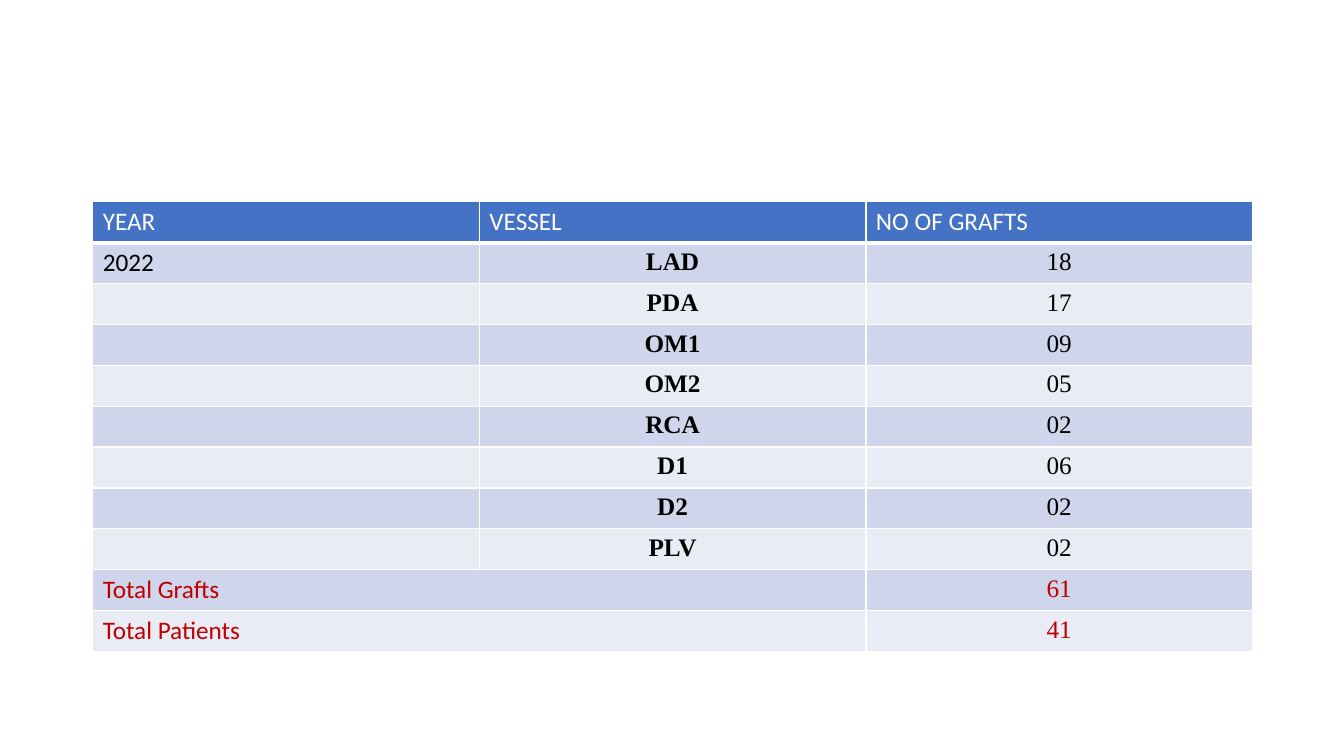
"""Build a slide with a table of grafts per vessel."""
from dataclasses import dataclass

from lxml import etree
from pptx import Presentation
from pptx.dml.color import RGBColor
from pptx.enum.text import PP_ALIGN
from pptx.oxml.ns import qn
from pptx.table import Table, _Cell
from pptx.util import Inches, Pt

LEFT, CENTER = PP_ALIGN.LEFT, PP_ALIGN.CENTER
SLIDE_WIDTH, SLIDE_HEIGHT = Inches(13.33), Inches(7.5)
TABLE_LEFT, TABLE_TOP = 0.069, 0.267
TABLE_WIDTH, TABLE_HEIGHT = 0.863, 0.595
COLUMN_COUNT = 3
WHITE, BLACK, RED = "FFFFFF", "000000", "C00000"
HEADER_BLUE, BANDS = "4472C4", ("CFD5EA", "E9EBF5")
SANS, SERIF = "Calibri", "Times New Roman"

HEADINGS = ("YEAR", "VESSEL", "NO OF GRAFTS")
YEAR = "2022"
GRAFTS = {"LAD": "18", "PDA": "17", "OM1": "09", "OM2": "05",
          "RCA": "02", "D1": "06", "D2": "02", "PLV": "02"}
TOTALS = {"Total Grafts": "61", "Total Patients": "41"}


@dataclass(frozen=True)
class Entry:
    """Text of one cell and its look."""
    text: str
    font: str = SANS
    color: str = BLACK
    bold: bool = False
    align: PP_ALIGN = LEFT


def rgb(value: str) -> RGBColor:
    """Turn a hex string into a colour."""
    return RGBColor.from_string(value)


def table_rows() -> list[list[Entry]]:
    """List the heading, vessel and total rows."""
    rows = [[Entry(heading, color=WHITE) for heading in HEADINGS]]
    for index, (vessel, count) in enumerate(GRAFTS.items()):
        rows.append([Entry("" if index else YEAR),
                     Entry(vessel, SERIF, bold=True, align=CENTER),
                     Entry(count, SERIF, align=CENTER)])
    for label, total in TOTALS.items():
        rows.append([Entry(label, color=RED), Entry(""),
                     Entry(total, SERIF, RED, align=CENTER)])
    return rows


def set_borders(cell: _Cell, bottom: float) -> None:
    """Give a cell white borders with its own bottom width."""
    properties = cell._tc.get_or_add_tcPr()
    for side, width in {"L": 1, "R": 1, "T": 1, "B": bottom}.items():
        line = etree.SubElement(properties, qn(f"a:ln{side}"), w=str(Pt(width)))
        fill = etree.SubElement(line, qn("a:solidFill"))
        etree.SubElement(fill, qn("a:srgbClr"), val=WHITE)


def write_entry(cell: _Cell, entry: Entry) -> None:
    """Write and format the text of a cell."""
    paragraph = cell.text_frame.paragraphs[0]
    paragraph.alignment = entry.align
    paragraph.font.size = Pt(18)
    if not entry.text:
        return
    run = paragraph.add_run()
    run.text = entry.text
    formats = {"name": entry.font, "size": Pt(18), "bold": entry.bold}
    for attribute, value in formats.items():
        setattr(run.font, attribute, value)
    run.font.color.rgb = rgb(entry.color)


def fill_table(table: Table, rows: list[list[Entry]]) -> None:
    """Fill the table with banded rows and join the total labels."""
    for row_index, entries in enumerate(rows):
        is_header = row_index == 0
        background = HEADER_BLUE if is_header else BANDS[(row_index - 1) % 2]
        for column_index, entry in enumerate(entries):
            cell = table.cell(row_index, column_index)
            set_borders(cell, 3 if is_header else 1)
            cell.fill.solid()
            cell.fill.fore_color.rgb = rgb(background)
            write_entry(cell, entry)
    for row_index in range(len(rows) - len(TOTALS), len(rows)):
        table.cell(row_index, 0).merge(table.cell(row_index, 1))


def main() -> None:
    """Create the presentation and save it."""
    presentation = Presentation()
    presentation.slide_width = SLIDE_WIDTH
    presentation.slide_height = SLIDE_HEIGHT
    slide = presentation.slides.add_slide(presentation.slide_layouts[6])
    rows = table_rows()
    frame = slide.shapes.add_table(
        len(rows), COLUMN_COUNT,
        int(SLIDE_WIDTH * TABLE_LEFT), int(SLIDE_HEIGHT * TABLE_TOP),
        int(SLIDE_WIDTH * TABLE_WIDTH), int(SLIDE_HEIGHT * TABLE_HEIGHT))
    fill_table(frame.table, rows)
    presentation.save("out.pptx")


if __name__ == "__main__":
    main()
